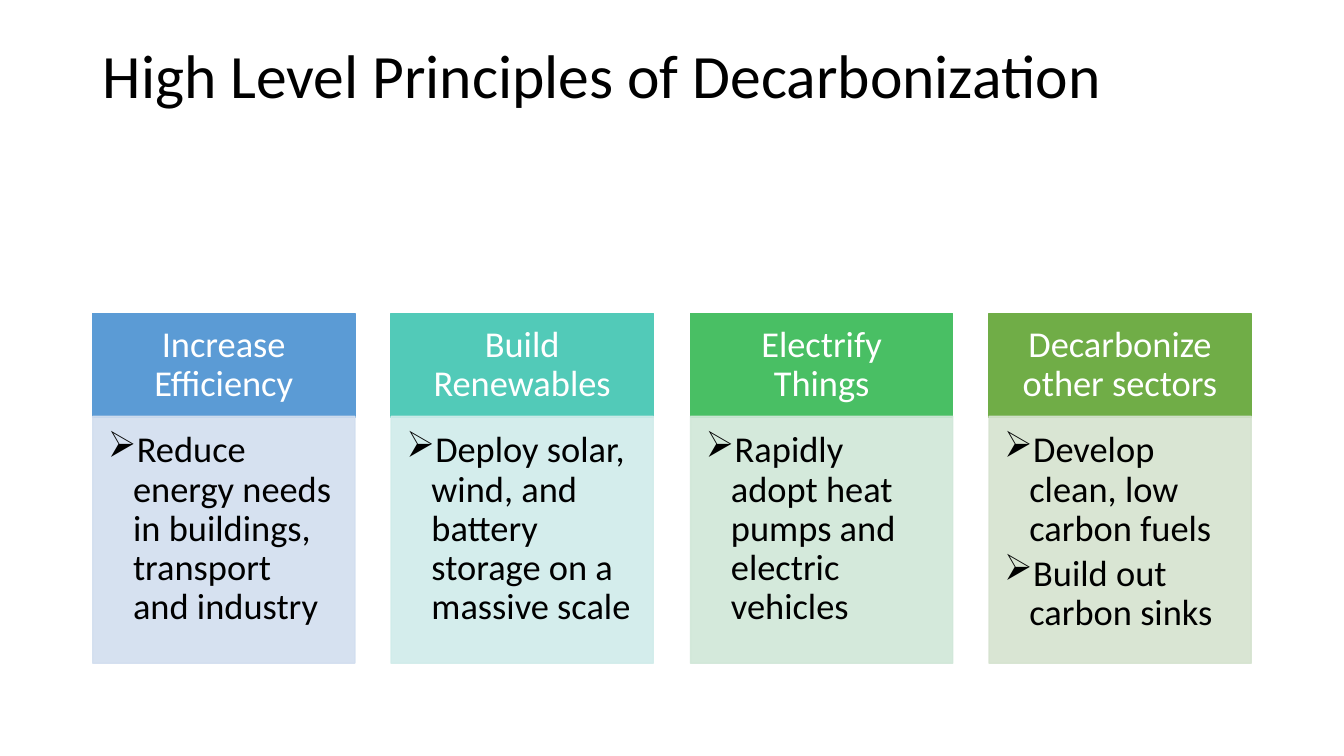
from dataclasses import dataclass

from lxml import etree
from pptx import Presentation
from pptx import util as u
from pptx.dml.color import RGBColor
from pptx.enum import shapes, text
from pptx.oxml import ns

EMU_PER_PX = 9144  # 100 px to the inch


def px(length: int) -> u.Emu:
    return u.Emu(length * EMU_PER_PX)


@dataclass(frozen=True)
class Theme:
    font: str = "Calibri"
    dark: str = "000000"
    light: str = "FFFFFF"
    title_size: int = 44
    text_size: int = 26
    line_spacing: float = 0.9
    point_gap: int = 4
    body_opacity: int = 90


@dataclass(frozen=True)
class Principle:
    heading: str
    points: tuple[str, ...]
    strong: str
    pale: str


THEME = Theme()
SLIDE_WIDTH, SLIDE_HEIGHT = 1333, 750
LEFT, CONTENT_WIDTH = 92, 1149
TITLE_TOP, TITLE_HEIGHT = 40, 145
CARD_WIDTH = 260
HEADING_TOP, HEADING_HEIGHT = 311, 103
BODY_TOP, BODY_HEIGHT = 413, 245
INDENT = 25

PRINCIPLES = [
    Principle("Increase Efficiency",
              ("Reduce energy needs in buildings, transport and industry",),
              "5B9BD5", "D2DEEF"),
    Principle("Build Renewables",
              ("Deploy solar, wind, and battery storage on a massive scale",),
              "52CAB8", "D0ECEA"),
    Principle("Electrify Things",
              ("Rapidly adopt heat pumps and electric vehicles",),
              "49BF64", "D0E7D8"),
    Principle("Decarbonize other sectors",
              ("Develop clean, low carbon fuels", "Build out carbon sinks"),
              "70AD47", "D5E3CF"),
]


def set_insets(frame, left: int, top: int, right: int, bottom: int) -> None:
    frame.word_wrap = True
    frame.margin_left, frame.margin_top = px(left), px(top)
    frame.margin_right, frame.margin_bottom = px(right), px(bottom)


def style_para(para, size: int, color: str, align) -> None:
    para.alignment = align
    para.line_spacing = THEME.line_spacing
    for span in para.runs:
        span.font.name = THEME.font
        span.font.size = u.Pt(size)
        span.font.color.rgb = RGBColor.from_string(color)


def add_bullet(para) -> None:
    props = para._p.get_or_add_pPr()
    props.set("marL", str(px(INDENT)))
    props.set("indent", str(-px(INDENT)))
    etree.SubElement(props, ns.qn("a:buChar")).set("char", "➢")


def add_panel(page, left: int, top: int, height: int, color: str):
    panel = page.shapes.add_shape(shapes.MSO_SHAPE.RECTANGLE, px(left), px(top),
                                  px(CARD_WIDTH), px(height))
    panel.shadow.inherit = False
    panel.fill.solid()
    panel.fill.fore_color.rgb = RGBColor.from_string(color)
    panel.line.color.rgb = RGBColor.from_string(color)
    panel.line.width = u.Pt(1)
    return panel


def set_opacity(panel, percent: int) -> None:
    for color in panel._element.spPr.iter(ns.qn("a:srgbClr")):
        etree.SubElement(color, ns.qn("a:alpha")).set("val", str(percent * 1000))


def add_title(page, title: str) -> None:
    box = page.shapes.add_textbox(px(LEFT), px(TITLE_TOP),
                                  px(CONTENT_WIDTH), px(TITLE_HEIGHT))
    frame = box.text_frame
    set_insets(frame, 10, 5, 10, 5)
    frame.text = title
    style_para(frame.paragraphs[0], THEME.title_size, THEME.dark, text.PP_ALIGN.LEFT)


def add_principle(page, left: int, principle: Principle) -> None:
    # Heading band
    heading = add_panel(page, left, HEADING_TOP, HEADING_HEIGHT, principle.strong)
    frame = heading.text_frame
    set_insets(frame, 20, 12, 20, 12)
    frame.vertical_anchor = text.MSO_ANCHOR.MIDDLE
    frame.text = principle.heading
    style_para(frame.paragraphs[0], THEME.text_size, THEME.light, text.PP_ALIGN.CENTER)

    # Bulleted body
    body = add_panel(page, left, BODY_TOP, BODY_HEIGHT, principle.pale)
    set_opacity(body, THEME.body_opacity)
    frame = body.text_frame
    set_insets(frame, 15, 15, 20, 23)
    frame.vertical_anchor = text.MSO_ANCHOR.TOP
    frame.text = "\n".join(principle.points)
    for para in frame.paragraphs:
        add_bullet(para)
        para.level = 1
        para.space_after = u.Pt(THEME.point_gap)
        style_para(para, THEME.text_size, THEME.dark, text.PP_ALIGN.LEFT)


def main() -> None:
    deck = Presentation()
    deck.slide_width, deck.slide_height = px(SLIDE_WIDTH), px(SLIDE_HEIGHT)
    page = deck.slides.add_slide(deck.slide_layouts[6])
    add_title(page, "High Level Principles of Decarbonization")

    # Cards spread evenly across the content width
    steps = len(PRINCIPLES) - 1
    for index, principle in enumerate(PRINCIPLES):
        offset = round(index * (CONTENT_WIDTH - CARD_WIDTH) / steps)
        add_principle(page, LEFT + offset, principle)
    deck.save("out.pptx")


if __name__ == "__main__":
    main()
